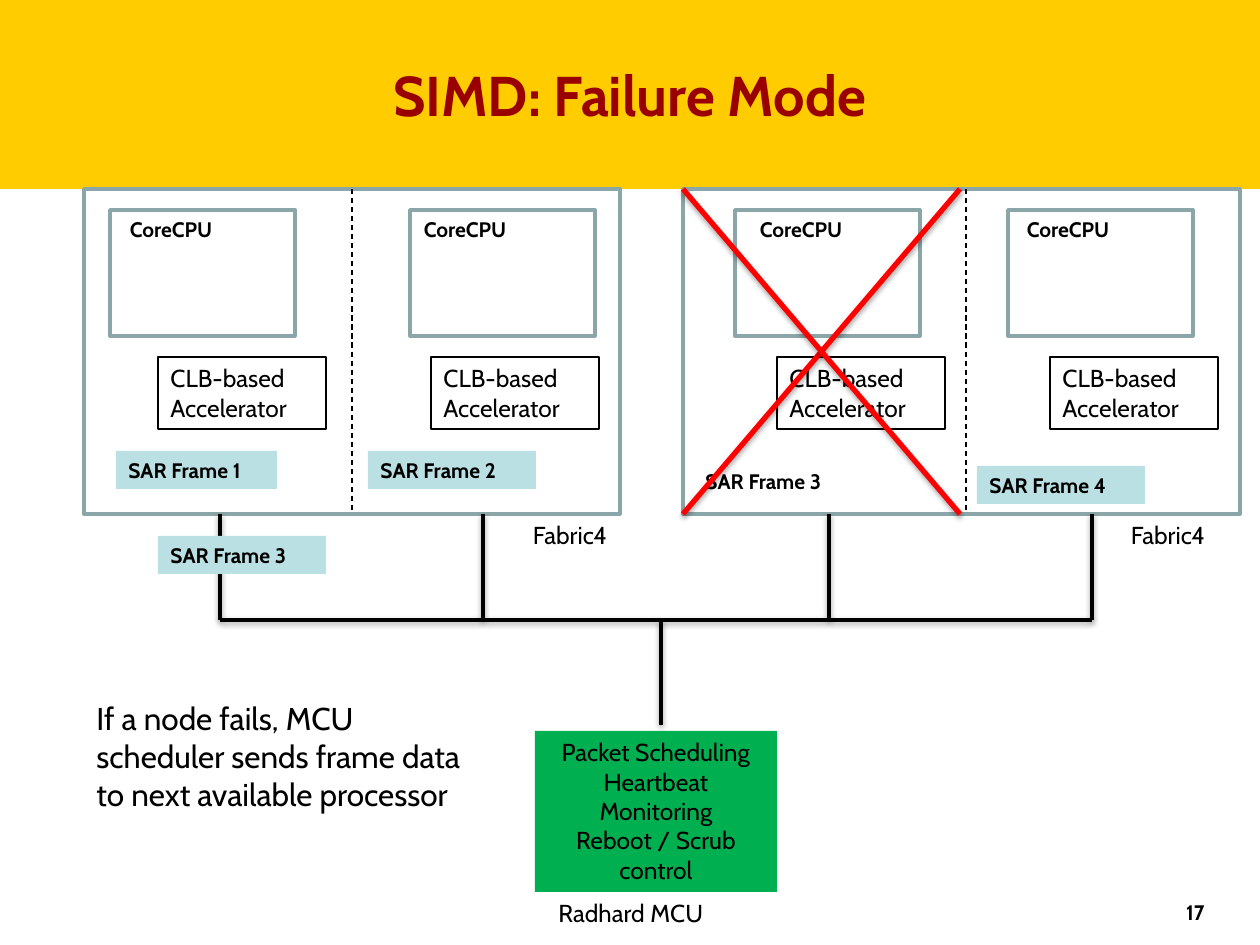
"""Build the SIMD failure mode slide: two processor boards on a shared bus."""
from lxml.etree import SubElement
from pptx import Presentation
from pptx.dml.color import RGBColor
from pptx.enum.dml import MSO_LINE
from pptx.enum.shapes import MSO_CONNECTOR, MSO_SHAPE
from pptx.enum.text import MSO_ANCHOR, MSO_AUTO_SIZE, PP_ALIGN
from pptx.oxml.ns import qn
from pptx.util import Emu, Pt

BLACK = RGBColor(0x00, 0x00, 0x00)
WHITE = RGBColor(0xFF, 0xFF, 0xFF)
GOLD = RGBColor(0xFF, 0xCC, 0x00)
MAROON = RGBColor(0x99, 0x00, 0x00)
GREY = RGBColor(0x8A, 0xA6, 0xA8)
GREEN = RGBColor(0x00, 0xB0, 0x50)
PALE_BLUE = RGBColor(0xBB, 0xE0, 0xE3)
RED = RGBColor(0xFF, 0x00, 0x00)
FONT = "Cabin"

TITLE = "SIMD: Failure Mode"
BOARD_TOP, BOARD_BOTTOM, BUS_Y = 189, 514, 620
BOARDS = [(84, 536, 352), (683, 557, 966)]
CORES_X = [110, 410, 735, 1008]
CORE_LABELS_X = [105, 399, 735, 1002]
ACCELERATORS_X = [158, 431, 777, 1050]
DROPS_X = [220, 483, 829, 1092]
FRAMES = [
    ("SAR Frame 1", 116, 451, 161, PALE_BLUE),
    ("SAR Frame 2", 368, 451, 168, PALE_BLUE),
    ("SAR Frame 4", 977, 466, 168, PALE_BLUE),
    ("SAR Frame 3", 693, 462, 168, None),
    ("SAR Frame 3", 158, 536, 168, PALE_BLUE),
]
BOARD_NAME = "Fabric4"
BOARD_NAMES_X = [504, 1102]
CORE_NAME = "CoreCPU"
ACCELERATOR = "CLB-based Accelerator"
SCHEDULER = ["Packet Scheduling", "Heartbeat Monitoring", "Reboot / Scrub control"]
SCHEDULER_NAME = "Radhard MCU"
NOTE = "If a node fails, MCU scheduler sends frame data to next available processor"
PAGE = "17"
FAILED_LEFT, FAILED_RIGHT = 683, 960


def px(length):
    return Emu(round(length * 914400 / 126))


def set_font(paragraph, size, bold=False, color=BLACK):
    font = paragraph.font
    font.name, font.size, font.bold = FONT, Pt(size), bold
    font.color.rgb = color


def write(shape, lines, size, bold, align):
    frame = shape.text_frame
    frame.text = "\n".join(lines)
    frame.word_wrap = True
    frame.vertical_anchor = MSO_ANCHOR.TOP
    frame.auto_size = MSO_AUTO_SIZE.SHAPE_TO_FIT_TEXT
    for paragraph in frame.paragraphs:
        paragraph.alignment = align
        set_font(paragraph, size, bold)


def add_box(slide, box, fill=None, line=None, width=2):
    shape = slide.shapes.add_shape(MSO_SHAPE.RECTANGLE, *map(px, box))
    shape.shadow.inherit = False
    if fill is None:
        shape.fill.background()
    else:
        shape.fill.solid()
        shape.fill.fore_color.rgb = fill
    if line is None:
        shape.line.fill.background()
    else:
        shape.line.color.rgb = line
        shape.line.width = Pt(width)
    return shape


def add_text(slide, box, text, size, bold=False, align=PP_ALIGN.LEFT):
    write(slide.shapes.add_textbox(*map(px, box)), [text], size, bold, align)


def add_line(slide, start, end, color=BLACK, width=2, shadow_alpha=38):
    line = slide.shapes.add_connector(MSO_CONNECTOR.STRAIGHT, *map(px, start + end))
    line.line.color.rgb = color
    line.line.width = Pt(width)
    effects = SubElement(line._element.spPr, qn("a:effectLst"))
    if shadow_alpha:
        shadow = SubElement(effects, qn("a:outerShdw"), blurRad=str(Pt(3.1)),
                            dist=str(Pt(1.6)), dir="5400000", rotWithShape="0")
        shade = SubElement(shadow, qn("a:srgbClr"), val=str(BLACK))
        SubElement(shade, qn("a:alpha"), val=str(shadow_alpha * 1000))
    return line


def add_title(slide):
    band = add_box(slide, (0, 0, 1260, BOARD_TOP), GOLD)
    title = slide.shapes.title
    title._element.addprevious(band._element)
    title.left, title.top, title.width, title.height = map(px, (210, 42, 840, 105))
    title.text_frame.text = TITLE
    title.text_frame.vertical_anchor = MSO_ANCHOR.MIDDLE
    paragraph = title.text_frame.paragraphs[0]
    paragraph.alignment = PP_ALIGN.CENTER
    set_font(paragraph, 32, True, MAROON)


def add_boards(slide):
    for left, width, divider_x in BOARDS:
        board = add_box(slide, (left, BOARD_TOP, width, BOARD_BOTTOM - BOARD_TOP), WHITE, GREY)
        divider = add_line(slide, (divider_x, BOARD_TOP), (divider_x, BOARD_BOTTOM),
                           width=0.75, shadow_alpha=0)
        divider.line.dash_style = MSO_LINE.DASH
        if divider_x == left + width / 2:
            divider.begin_connect(board, 0)
            divider.end_connect(board, 2)
    for left in BOARD_NAMES_X:
        add_text(slide, (left, 514, 132, 43), BOARD_NAME, 14, align=PP_ALIGN.CENTER)
    for left, label_left, accelerator_left in zip(CORES_X, CORE_LABELS_X, ACCELERATORS_X):
        add_box(slide, (left, 210, 185, 126), WHITE, GREY)
        add_text(slide, (label_left, 210, 132, 38), CORE_NAME, 12, True, PP_ALIGN.CENTER)
        accelerator = add_box(slide, (accelerator_left, 357, 168, 72), None, BLACK, 0.75)
        write(accelerator, [ACCELERATOR], 14, False, PP_ALIGN.LEFT)


def add_bus(slide):
    add_line(slide, (DROPS_X[0], BUS_Y), (DROPS_X[-1], BUS_Y))
    for x in DROPS_X:
        add_line(slide, (x, BUS_Y), (x, BOARD_BOTTOM))
    add_line(slide, (661, 725), (661, BUS_Y))


def add_scheduler(slide):
    scheduler = add_box(slide, (535, 731, 242, 161), GREEN)
    write(scheduler, SCHEDULER, 14, False, PP_ALIGN.CENTER)
    add_text(slide, (546, 892, 210, 43), SCHEDULER_NAME, 14)
    add_text(slide, (84, 693, 399, 165), NOTE, 18)
    add_text(slide, (955, 893, 262, 42), PAGE, 12, True, PP_ALIGN.RIGHT)


def add_frames(slide):
    for text, left, top, width, fill in FRAMES:
        write(add_box(slide, (left, top, width, 38), fill), [text], 12, True, PP_ALIGN.LEFT)


def add_failure_cross(slide):
    for start_x, end_x in [(FAILED_RIGHT, FAILED_LEFT), (FAILED_LEFT, FAILED_RIGHT)]:
        add_line(slide, (start_x, BOARD_TOP), (end_x, BOARD_BOTTOM), RED, 3, 35)


def main():
    presentation = Presentation()
    presentation.slide_width, presentation.slide_height = px(1260), px(945)
    slide = presentation.slides.add_slide(presentation.slide_layouts[5])
    add_title(slide)
    add_boards(slide)
    add_bus(slide)
    add_scheduler(slide)
    add_frames(slide)
    add_failure_cross(slide)
    presentation.save("out.pptx")


if __name__ == "__main__":
    main()
